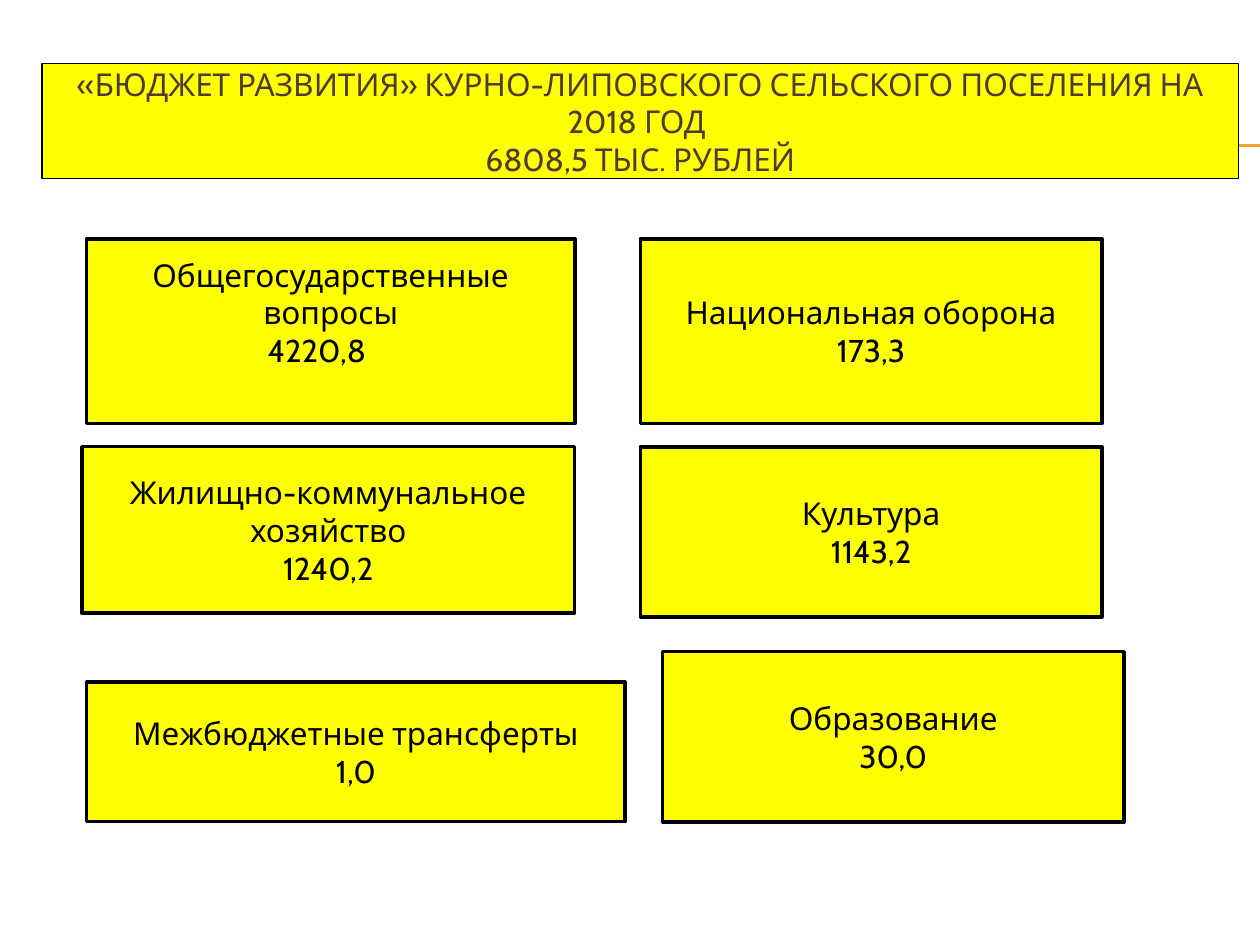
from dataclasses import dataclass

from pptx import Presentation
from pptx.dml.color import RGBColor as RGB
from pptx.enum.shapes import MSO_CONNECTOR as LINK, MSO_SHAPE as SHAPE
from pptx.enum.text import MSO_ANCHOR as ANCHOR, PP_ALIGN as ALIGN
from pptx.oxml.ns import qn
from pptx.util import Pt


@dataclass(frozen=True)
class Theme:
    font: str = "Cabin"
    size: int = 18
    fill: RGB = RGB(0xFF, 0xFF, 0x00)
    ink: RGB = RGB(0x00, 0x00, 0x00)
    title: RGB = RGB(0x4E, 0x3B, 0x30)
    rule: RGB = RGB(0xF0, 0xA2, 0x2E)
    thin: float = 0.75
    thick: float = 2


THEME = Theme()
WIDTH, HEIGHT = 720, 540
TITLE = ("«БЮДЖЕТ РАЗВИТИЯ» КУРНО-ЛИПОВСКОГО СЕЛЬСКОГО ПОСЕЛЕНИЯ НА 2018 ГОД "
         "\v6808,5 ТЫС. РУБЛЕЙ")

# Name, amount, then left, top, width and height
ITEMS = [
    ("Общегосударственные вопросы", "4220,8", (49.5, 136.5, 279, 105.5)),
    ("Жилищно-коммунальное хозяйство", "1240,2", (46.8, 255.3, 281.6, 95.2)),
    ("Национальная оборона", "173,3", (365.9, 136.5, 263.8, 105.5)),
    ("Культура", "1143,2", (365.9, 255.3, 263.8, 97.3)),
    ("Межбюджетные трансферты", "1,0", (49.5, 389.8, 307.8, 79.7)),
    ("Образование", "30,0", (378.6, 372.4, 263.8, 97.3)),
]


def add_rule(slide, left, top):
    """Draw a thin line from left to the slide's right edge."""
    line = slide.shapes.add_connector(
        LINK.STRAIGHT, Pt(left), Pt(top), Pt(WIDTH), Pt(top))
    line.line.color.rgb = THEME.rule
    line.line.width = Pt(THEME.thin)
    props = line._element.spPr
    props.append(props.makeelement(qn("a:effectLst"), {}))


def add_box(slide, place, lines, color, edge):
    box = slide.shapes.add_shape(SHAPE.RECTANGLE, *map(Pt, place))
    box.shadow.inherit = False
    box.fill.solid()
    box.fill.fore_color.rgb = THEME.fill
    box.line.color.rgb = THEME.ink
    box.line.width = Pt(edge)
    frame = box.text_frame
    frame.word_wrap = True
    frame.vertical_anchor = ANCHOR.MIDDLE
    for i, text in enumerate(lines):
        para = frame.add_paragraph() if i else frame.paragraphs[0]
        para.text = text
        para.alignment = ALIGN.CENTER
        for run in para.runs:
            run.font.name = THEME.font
            run.font.size = Pt(THEME.size)
            run.font.color.rgb = color
    return box


def main():
    deck = Presentation()
    deck.slide_width, deck.slide_height = Pt(WIDTH), Pt(HEIGHT)
    slide = deck.slides.add_slide(deck.slide_layouts[6])

    for top in (82.8, 83.5):
        add_rule(slide, 40.3, top)
    add_box(slide, (24, 36.3, 683.7, 65.9), [TITLE], THEME.title, THEME.thin)
    boxes = [add_box(slide, place, (name, amount), THEME.ink, THEME.thick)
             for name, amount, place in ITEMS]

    # The first box keeps a line free below, and its amount sits left of centre
    first = boxes[0].text_frame
    first.margin_bottom = Pt(25)
    first.paragraphs[1]._p.get_or_add_pPr().set("marR", str(Pt(16)))

    deck.save("out.pptx")


if __name__ == "__main__":
    main()
